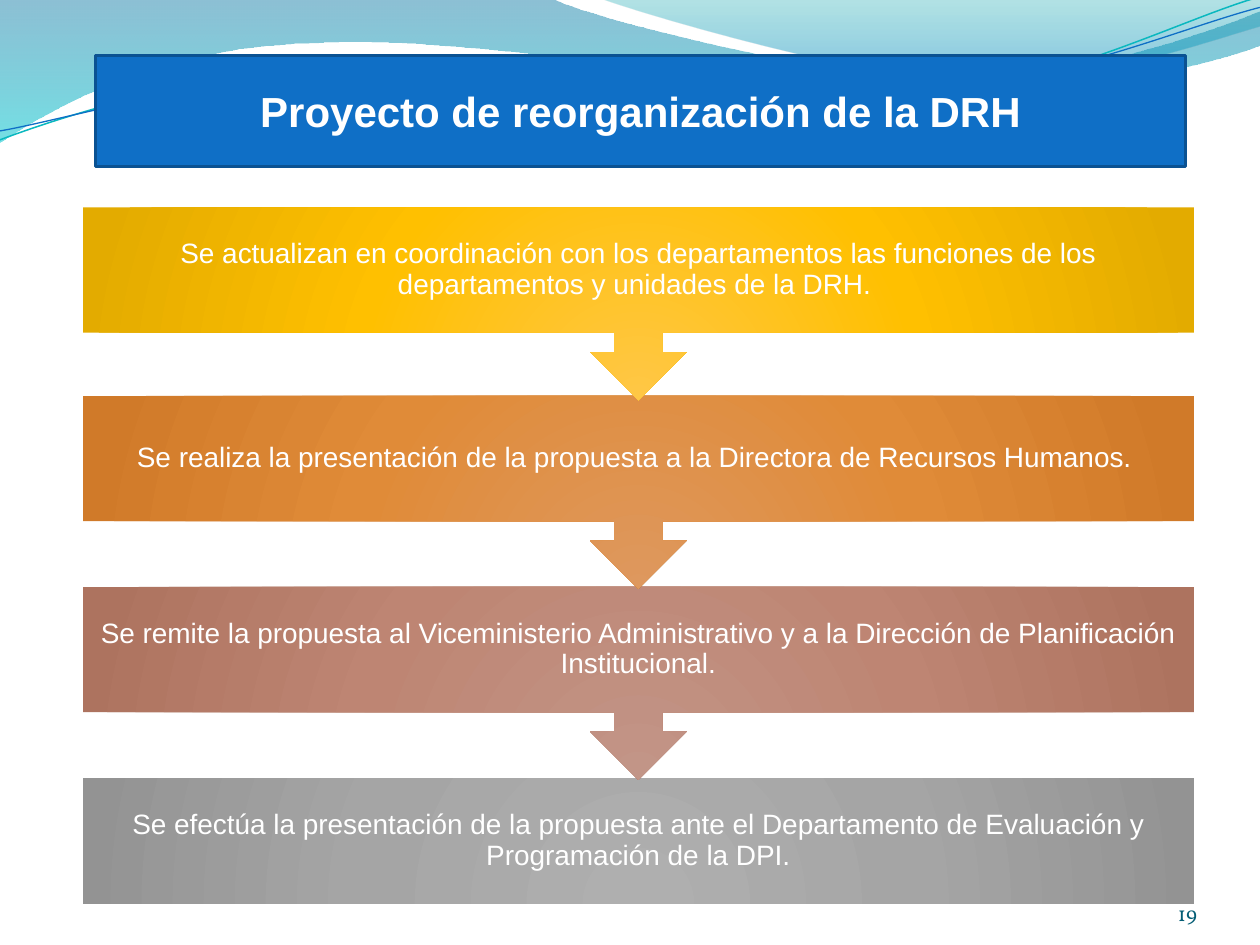
"""Build the slide on the DRH reorganisation project with python-pptx."""
import lxml.etree
import pptx
import pptx.dml.color
import pptx.enum.shapes
import pptx.enum.text
import pptx.oxml.ns
import pptx.util

Cm = pptx.util.Cm
Pt = pptx.util.Pt
qn = pptx.oxml.ns.qn
SHAPES = pptx.enum.shapes.MSO_SHAPE
ALIGN = pptx.enum.text.PP_ALIGN
ANCHOR = pptx.enum.text.MSO_ANCHOR

TITLE = "Proyecto de reorganización de la DRH"
PAGE_NUMBER = "19"
STEPS = [
    (4.18, "Se actualizan en coordinación con los departamentos las funciones de los "
     "departamentos y unidades de la DRH. ", ("FFC746", "FFC000", "E3AB00")),
    (7.98, "Se realiza la presentación de la propuesta a la Directora de Recursos Humanos. ",
     ("DE985E", "E08B38", "D07A29")),
    (11.83, "Se remite la propuesta al Viceministerio Administrativo y a la Dirección de "
     "Planificación Institucional.", ("C29587", "BE8573", "AD735F")),
    (15.69, "Se efectúa la presentación de la propuesta ante el Departamento de Evaluación y "
     "Programación de la DPI.", ("AFAFAF", "A5A5A5", "939393")),
]
STEP_LEFT, STEP_WIDTH = 1.67, 22.4
BOX_HEIGHT, CALLOUT_HEIGHT = 2.53, 3.89

WAVES = [
    ([(0, 0), (11.18, 0), (12.09, 0.43, 16.87, 1.6, 19.25, 1.6),
      (21.67, 1.6, 24.33, 0.66, 25.4, 0.23), (25.4, 0.91),
      (24.97, 1.12, 22.1, 1.93, 18.95, 1.91), (15.8, 1.91, 9.7, 0.71, 6.53, 0.86),
      (3.28, 0.91, 1.17, 2.11, 0, 2.87)],
     [(0, "0074A1", 45), (100, "00C6CF", 55)]),
    ([(12.17, 0), (12.93, 0.28, 17.32, 1.57, 19.53, 1.65),
      (21.74, 1.75, 24.41, 0.81, 25.4, 0.53), (25.4, 0)],
     [(0, "00A1A9", 30), (80, "008BBF", 45)]),
]
STRANDS = [
    ([(0, 2.82), (1.22, 2.36, 4.01, 1.45, 7.04, 1.32),
      (10.03, 1.19, 15.06, 2.26, 18.11, 2.03), (21.16, 1.8, 23.83, 0.38, 25.35, -0.05)],
     "0AB8BF", 0.85),
    ([(0, 2.64), (1.19, 2.44, 4.17, 1.55, 7.19, 1.42),
      (10.24, 1.3, 15.16, 2.13, 18.21, 1.91), (21.23, 1.7, 23.9, 0.53, 25.4, 0.15)],
     "0F6FC6", 0.75),
]


def color(value):
    """Return the RGB colour of a hex string."""
    return pptx.dml.color.RGBColor.from_string(value)


def fill_gradient(shape, stops, radial=False):
    """Fill a shape with a downward or a bottom-centred radial gradient."""
    shape.fill.gradient()
    gradient = shape._element.spPr.find(qn("a:gradFill"))
    stop_xml = "".join(
        f'<a:gs pos="{position * 1000}"><a:srgbClr val="{value}">'
        f'<a:alpha val="{alpha * 1000}"/></a:srgbClr></a:gs>'
        for position, value, alpha in stops)
    direction = ('<a:path path="circle"><a:fillToRect l="50000" t="100000" r="50000" b="0"/>'
                 '</a:path>' if radial else '<a:lin ang="5400000" scaled="0"/>')
    replacement = lxml.etree.fromstring(
        f'<a:gradFill {pptx.oxml.ns.nsdecls("a")} rotWithShape="1">'
        f'<a:gsLst>{stop_xml}</a:gsLst>{direction}</a:gradFill>')
    gradient[:] = list(replacement)


def add_outline(slide, segments, close):
    """Add a freeform of straight lines (two values) and Bezier curves (six values)."""
    ends = [(Cm(segment[-2]), Cm(segment[-1])) for segment in segments]
    builder = slide.shapes.build_freeform(*ends[0])
    builder.add_line_segments(ends[1:], close=close)
    shape = builder.convert_to_shape()
    shape.shadow.inherit = False
    lines = list(shape._element.iter(qn("a:lnTo")))
    for line, segment in zip(lines, segments[1:]):
        if len(segment) == 6:
            curve = lxml.etree.Element(qn("a:cubicBezTo"))
            for x, y in zip(segment[::2], segment[1::2]):
                lxml.etree.SubElement(curve, qn("a:pt"), x=str(Cm(x) - shape.left),
                                      y=str(Cm(y) - shape.top))
            line.getparent().replace(line, curve)
    return shape


def add_box(slide, kind, left, top, width, height):
    """Add a preset shape without shadow or line."""
    shape = slide.shapes.add_shape(kind, Cm(left), Cm(top), Cm(width), Cm(height))
    shape.shadow.inherit = False
    shape.line.fill.background()
    return shape


def write(shape, text, size, font="Arial", fill="FFFFFF", bold=False, align=ALIGN.CENTER,
          anchor=ANCHOR.MIDDLE, inset=0.3, spacing=1.0):
    """Put one formatted paragraph into a shape."""
    frame = shape.text_frame
    frame.word_wrap = True
    frame.vertical_anchor = anchor
    frame.margin_left = frame.margin_right = Cm(inset)
    frame.margin_top = frame.margin_bottom = Cm(inset)
    paragraph = frame.paragraphs[0]
    paragraph.alignment = align
    paragraph.line_spacing = spacing
    run = paragraph.add_run()
    run.text = text
    run.font.name = font
    run.font.size = Pt(size)
    run.font.bold = bold
    run.font.color.rgb = color(fill)


def main():
    """Build and save the presentation."""
    presentation = pptx.Presentation()
    presentation.slide_width, presentation.slide_height = Cm(25.4), Cm(19.05)
    slide = presentation.slides.add_slide(presentation.slide_layouts[6])

    for segments, stops in WAVES:
        wave = add_outline(slide, segments, close=True)
        wave.line.fill.background()
        fill_gradient(wave, stops)
    for segments, stroke, width in STRANDS:
        strand = add_outline(slide, segments, close=False)
        strand.fill.background()
        strand.line.color.rgb = color(stroke)
        strand.line.width = Pt(width)

    number = slide.shapes.add_textbox(Cm(22.02), Cm(17.65), Cm(2.11), Cm(1.02))
    write(number, PAGE_NUMBER, 12, font="Vollkorn", fill="045D75", align=ALIGN.RIGHT,
          anchor=ANCHOR.BOTTOM, inset=0)

    title = add_box(slide, SHAPES.RECTANGLE, 1.93, 1.12, 21.97, 2.24)
    title.fill.solid()
    title.fill.fore_color.rgb = color("0F6FC6")
    title.line.color.rgb = color("0B5292")
    title.line.width = Pt(2)
    write(title, TITLE, 24, bold=True)

    for top, text, shades in reversed(STEPS):
        kind, height = ((SHAPES.RECTANGLE, BOX_HEIGHT) if top == STEPS[-1][0]
                        else (SHAPES.DOWN_ARROW_CALLOUT, CALLOUT_HEIGHT))
        step = add_box(slide, kind, STEP_LEFT, top, STEP_WIDTH, height)
        fill_gradient(step, [(place * 50, shade, 100) for place, shade in enumerate(shades)],
                      radial=True)
        write(step, text, 16, spacing=0.9)

    presentation.save("out.pptx")


if __name__ == "__main__":
    main()
